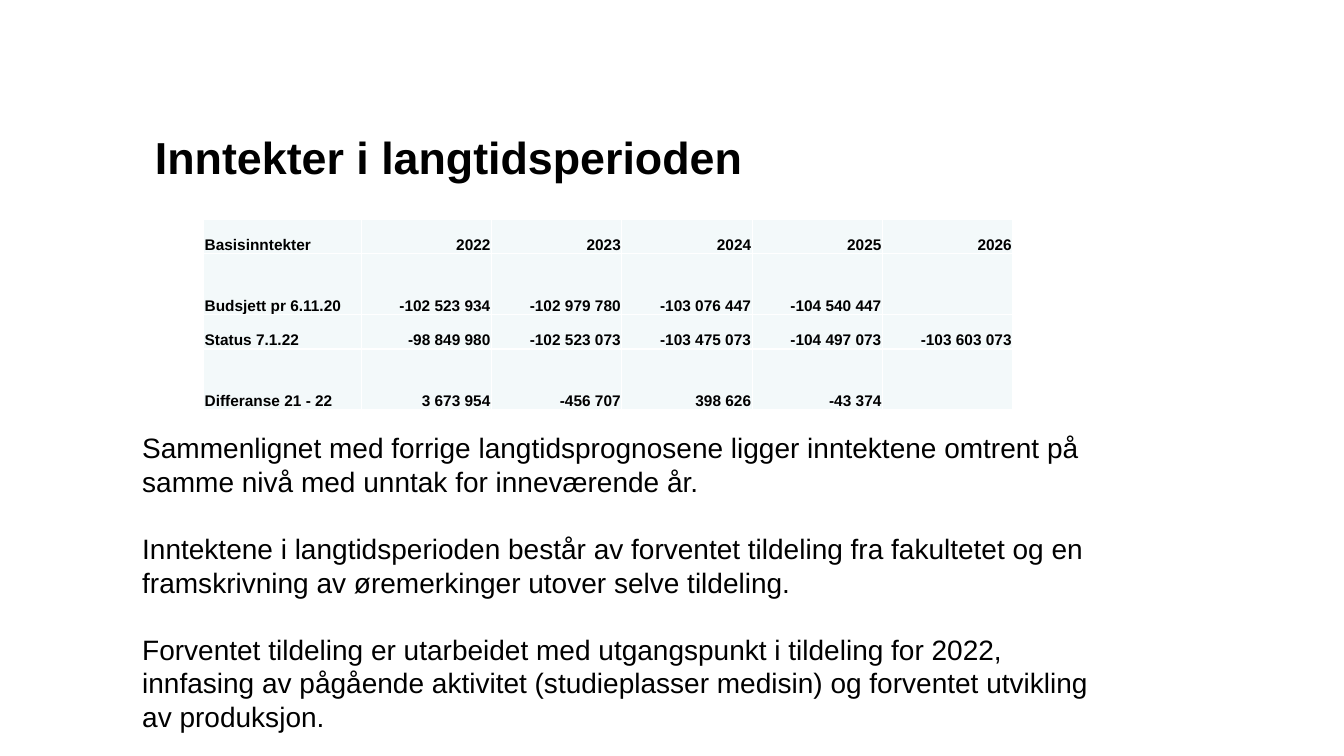
import pptx
import pptx.util
import pptx.dml.color
import pptx.enum.text
from lxml import etree

Pt = pptx.util.Pt
ALIGN = pptx.enum.text.PP_ALIGN
ANCHOR = pptx.enum.text.MSO_ANCHOR
AUTO = pptx.enum.text.MSO_AUTO_SIZE
COLORS = {"text": "000000", "cell": "F3F9FA", "border": "FFFFFF"}
FONT = "Arial"
A = "http://schemas.openxmlformats.org/drawingml/2006/main"

INCOME = [
    ["Basisinntekter", "2022", "2023", "2024", "2025", "2026"],
    ["Budsjett pr 6.11.20", "-102 523 934", "-102 979 780", "-103 076 447", "-104 540 447", ""],
    ["Status 7.1.22", "-98 849 980", "-102 523 073", "-103 475 073", "-104 497 073", "-103 603 073"],
    ["Differanse 21 - 22", "3 673 954", "-456 707", "398 626", "-43 374", ""],
]
COMMENTS = [
    "Sammenlignet med forrige langtidsprognosene ligger inntektene omtrent på samme nivå "
    "med unntak for inneværende år.",
    "Inntektene i langtidsperioden består av forventet tildeling fra fakultetet og en "
    "framskrivning av øremerkinger utover selve tildeling.",
    "Forventet tildeling er utarbeidet med utgangspunkt i tildeling for 2022, innfasing av "
    "pågående aktivitet (studieplasser medisin) og forventet utvikling av produksjon.",
]


def rgb(name):
    return pptx.dml.color.RGBColor.from_string(COLORS[name])


def format_text(p, size, bold=False):
    for r in p.runs:
        r.font.name = FONT
        r.font.size = Pt(size)
        r.font.bold = bold
        r.font.color.rgb = rgb("text")


def set_borders(cell):
    # Border lines come before the fill in the cell properties
    tc_pr = cell._tc.get_or_add_tcPr()
    for i, side in enumerate(("lnL", "lnR", "lnT", "lnB")):
        ln = etree.Element(f"{{{A}}}{side}", w=str(Pt(1)))
        fill = etree.SubElement(ln, f"{{{A}}}solidFill")
        etree.SubElement(fill, f"{{{A}}}srgbClr", val=COLORS["border"])
        tc_pr.insert(i, ln)


def add_title(s, text, x, y, w, h):
    sp = s.shapes.title
    sp.left, sp.top, sp.width, sp.height = Pt(x), Pt(y), Pt(w), Pt(h)
    tf = sp.text_frame
    tf.text = text
    tf.auto_size = AUTO.NONE
    tf.vertical_anchor = ANCHOR.MIDDLE
    p = tf.paragraphs[0]
    p.alignment = ALIGN.LEFT
    format_text(p, 32, bold=True)


def add_income_table(s, rows, x, y, w, h):
    n_cols = len(rows[0])
    table = s.shapes.add_table(len(rows), n_cols, Pt(x), Pt(y), Pt(w), Pt(h)).table

    # The label column is wider, and every second row is taller
    label_w = 112.5
    for i, col in enumerate(table.columns):
        col.width = Pt(label_w if i == 0 else (w - label_w) / (n_cols - 1))
    for i, row in enumerate(table.rows):
        row.height = Pt(h * (0.32 if i % 2 else 0.18))

    for i, values in enumerate(rows):
        for j, value in enumerate(values):
            cell = table.cell(i, j)
            cell.fill.solid()
            cell.fill.fore_color.rgb = rgb("cell")
            set_borders(cell)
            cell.vertical_anchor = ANCHOR.BOTTOM
            cell.margin_left = cell.margin_right = cell.margin_top = Pt(0.7)
            cell.margin_bottom = 0
            cell.text_frame.text = value
            p = cell.text_frame.paragraphs[0]
            p.alignment = ALIGN.RIGHT if j else ALIGN.LEFT
            format_text(p, 11, bold=True)


def add_comments(s, texts, x, y, w, h):
    tf = s.shapes.add_textbox(Pt(x), Pt(y), Pt(w), Pt(h)).text_frame
    tf.word_wrap = True
    line = 24
    for i, text in enumerate(texts):
        p = tf.add_paragraph() if i else tf.paragraphs[0]
        p.text = text
        p.line_spacing = Pt(line)
        p.space_before = Pt(line if i else 0)
        format_text(p, 20)


def main():
    prs = pptx.Presentation()
    prs.slide_width, prs.slide_height = Pt(960), Pt(540)
    s = prs.slides.add_slide(prs.slide_layouts[5])
    add_title(s, "Inntekter i langtidsperioden", 103.5, 66.5, 808, 90)
    add_comments(s, COMMENTS, 94.5, 304, 700, 250)
    add_income_table(s, INCOME, 145.5, 156.5, 578, 136.5)
    prs.save("out.pptx")


if __name__ == "__main__":
    main()
